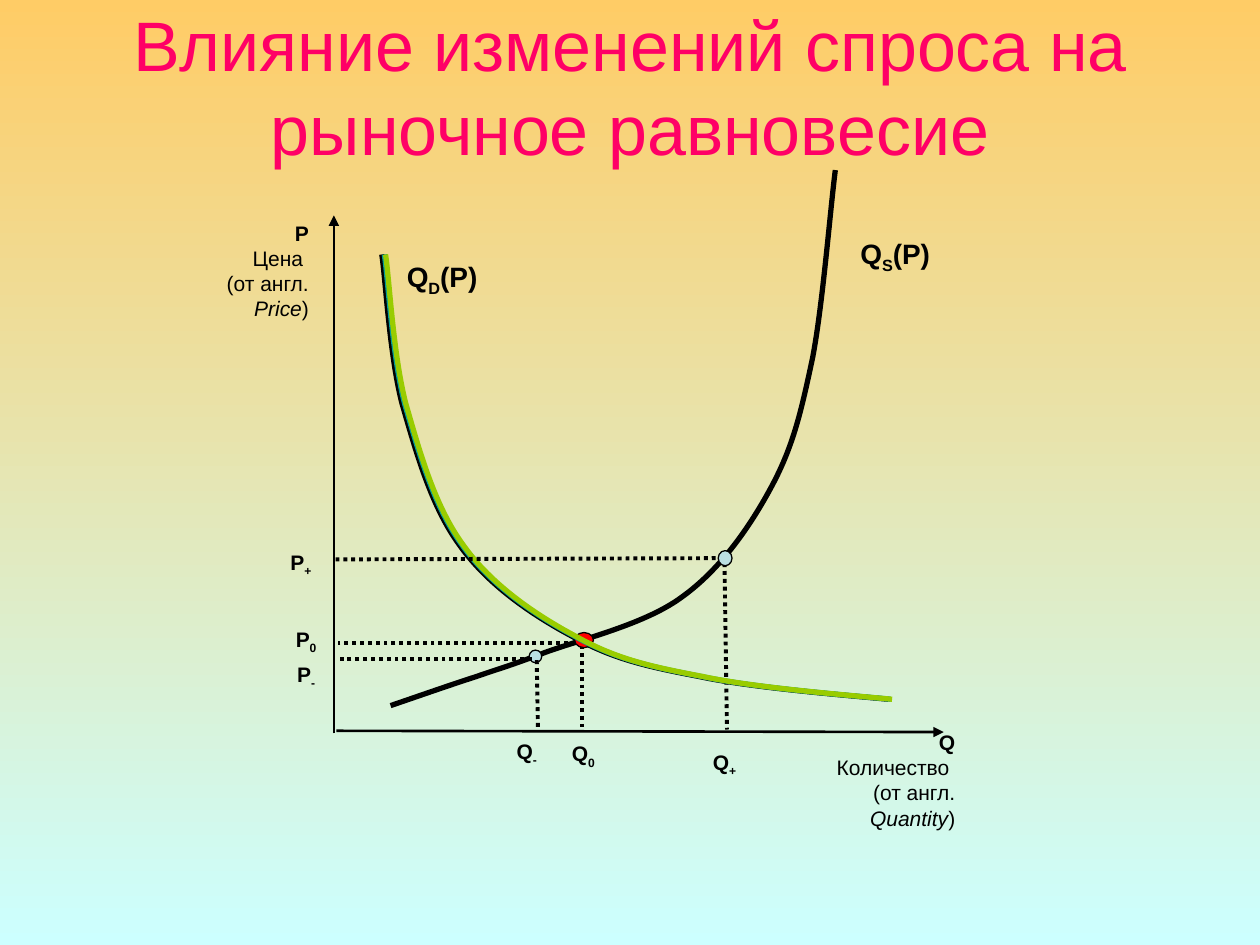
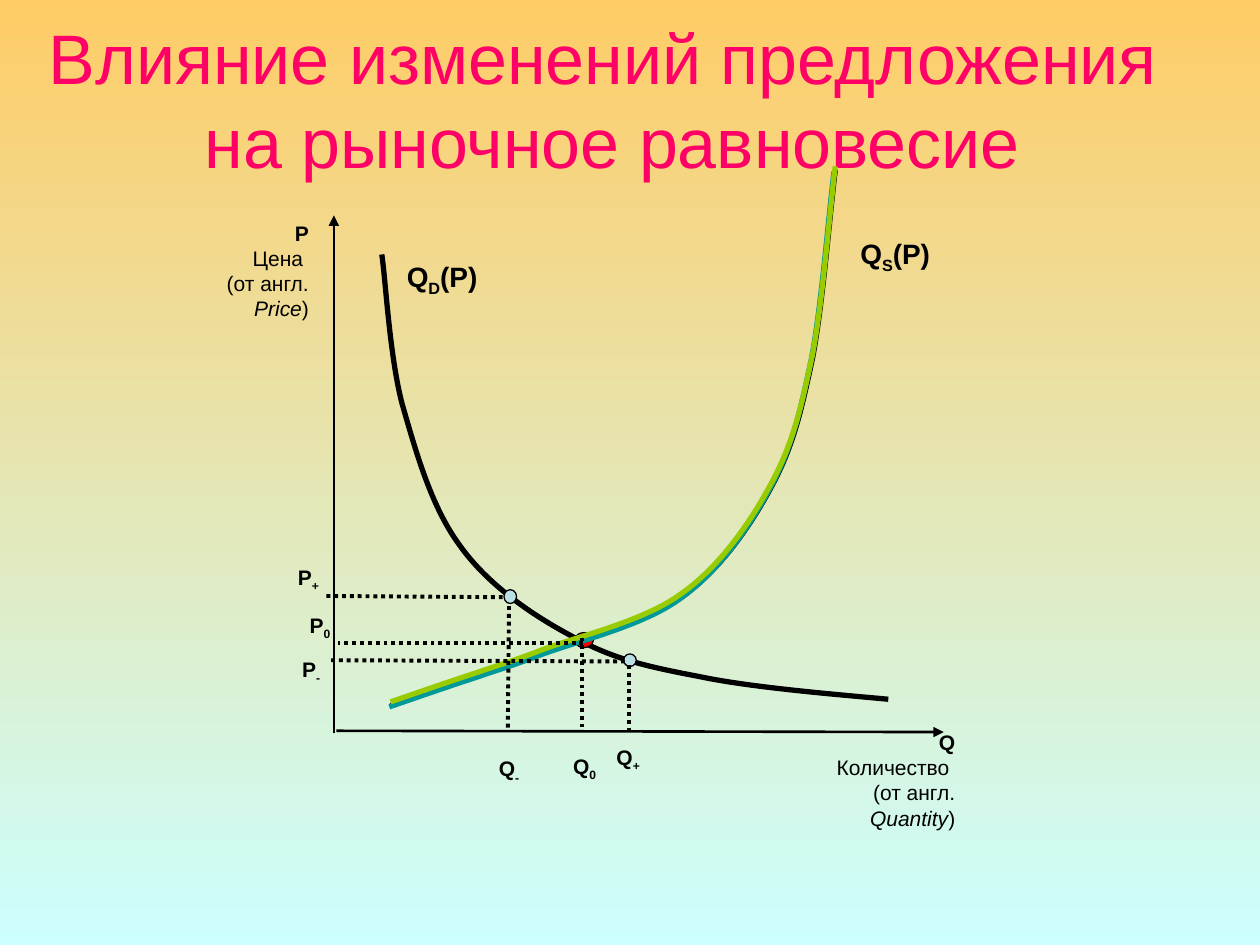
from pptx import Presentation
from pptx import util as u
from pptx.dml.color import RGBColor
from pptx.enum import dml, shapes, text
from pptx.oxml.ns import qn
from lxml import etree

COLORS = {
    "sky": "FFCC66", "ground": "CCFFFF", "title": "FF0066", "ink": "000000",
    "teal": "009999", "green": "99CC00", "equilibrium": "FF0000", "shifted": "BBE0E3",
}
FONT = "Arial"
COLUMNS, ROWS = 10, 7.5
CELL = u.Inches(1)
LEFT, CENTER, RIGHT = text.PP_ALIGN.LEFT, text.PP_ALIGN.CENTER, text.PP_ALIGN.RIGHT

# Start point, then two control points and an end point for each segment
DEMAND = [
    (3.03, 2.02),
    (3.06, 2.21), (3.09, 2.81), (3.19, 3.2),
    (3.3, 3.58), (3.42, 4.02), (3.65, 4.33),
    (3.87, 4.64), (4.22, 4.88), (4.54, 5.05),
    (4.86, 5.23), (5.13, 5.29), (5.55, 5.37),
    (5.97, 5.46), (6.73, 5.52), (7.05, 5.55),
]
SUPPLY = [
    (3.1, 5.6),
    (3.22, 5.56), (3.59, 5.43), (3.78, 5.37),
    (3.98, 5.3), (4, 5.3), (4.27, 5.2),
    (4.54, 5.09), (5.1, 4.97), (5.41, 4.74),
    (5.72, 4.52), (5.96, 4.17), (6.13, 3.85),
    (6.3, 3.53), (6.36, 3.26), (6.45, 2.84),
    (6.53, 2.42), (6.59, 1.66), (6.63, 1.35),
]
AXES = [((2.65, 5.82), (2.65, 1.71)), ((2.67, 5.8), (7.49, 5.81))]
AXIS_CAPTIONS = [
    ((1.53, 1.7, 1.02, 1.17), "P", "Цена ", "Price"),
    ((6.07, 5.74, 1.61, 1.02), "Q", "Количество ", "Quantity"),
]
DEMAND_NAME = ((3.13, 2.01, 0.89, 0.37), "D")
SUPPLY_NAME = ((6.73, 1.83, 0.83, 0.38), "S")
EQUILIBRIUM = (4.56, 5.02, 0.15, 0.12)
EQUILIBRIUM_GUIDES = [((4.63, 5.1), (2.68, 5.1)), ((4.62, 5.06), (4.62, 5.77))]

DEMAND_SHIFT = {
    "title": "Влияние изменений спроса на рыночное равновесие",
    "title_box": (0.5, 0.3, 9, 0.76),
    "guides_below": [((5.75, 4.47), (5.77, 5.79)), *EQUILIBRIUM_GUIDES],
    "moving_curve": DEMAND,
    "offsets": {"teal": (0.02, 0), "green": (0.03, 0)},
    "points": [(5.7, 4.37, 0.11, 0.12), (4.2, 5.16, 0.1, 0.1)],
    "guides_above": [
        ((5.68, 4.43), (2.64, 4.44)),
        ((4.22, 5.23), (2.69, 5.23)), ((4.26, 5.24), (4.27, 5.8)),
    ],
    "prices": {"+": (2.15, 4.31, 0.42, 0.37), "0": (2.19, 4.92, 0.42, 0.37),
               "-": (2.18, 5.2, 0.42, 0.37)},
    "quantities": {"-": (3.94, 5.81, 0.48, 0.35), "0": (4.39, 5.83, 0.48, 0.35),
                   "+": (5.51, 5.9, 0.48, 0.35)},
}
SUPPLY_SHIFT = {
    "title": "Влияние изменений предложения \vна рыночное равновесие",
    "title_box": (0.22, 0.17, 9.28, 1.23),
    "guides_below": [],
    "moving_curve": SUPPLY,
    "offsets": {"teal": (-0.01, 0.01), "green": (0, -0.03)},
    "points": [(4, 4.68, 0.1, 0.11), (4.95, 5.19, 0.1, 0.1)],
    "guides_above": [
        ((3.99, 4.74), (2.59, 4.73)), ((4.04, 4.81), (4.03, 5.79)),
        *EQUILIBRIUM_GUIDES,
        ((4.96, 5.25), (2.6, 5.24)), ((4.99, 5.28), (4.99, 5.8)),
    ],
    "prices": {"+": (2.2, 4.43, 0.43, 0.37), "0": (2.28, 4.81, 0.44, 0.41),
               "-": (2.2, 5.16, 0.44, 0.41)},
    "quantities": {"-": (3.27, 5.95, 1.54, 0.74), "0": (3.87, 5.93, 1.54, 0.74),
                   "+": (4.69, 5.86, 0.59, 0.28)},
}


def rgb(name):
    return RGBColor.from_string(COLORS[name])


def cells(values):
    """Turn grid cells into slide lengths."""
    return [round(value * CELL) for value in values]


def apply(target, formats):
    for name, value in formats.items():
        setattr(target, name, value)


def style_font(font, size, color="ink", **formats):
    apply(font, {"name": FONT, "size": u.Pt(size), **formats})
    font.color.rgb = rgb(color)


def style_line(line, width, color="ink"):
    line.width = u.Pt(width)
    line.color.rgb = rgb(color)


def paint_background(master):
    fill = master.background.fill
    fill.gradient()
    fill.gradient_angle = 270
    for stop, name in zip(fill.gradient_stops, ("sky", "ground")):
        stop.color.rgb = rgb(name)


def add_title(slide, wording, box):
    title = slide.shapes.title
    apply(title, dict(zip(("left", "top", "width", "height"), cells(box))))
    frame = title.text_frame
    frame.text = wording
    apply(frame, {"word_wrap": True, "auto_size": text.MSO_AUTO_SIZE.NONE,
                  "vertical_anchor": text.MSO_ANCHOR.MIDDLE})
    paragraph = frame.paragraphs[0]
    paragraph.alignment = CENTER
    for run in paragraph.runs:
        style_font(run.font, 40, "title")


def add_label(slide, box, lines, size=12, align=RIGHT):
    """Each line is a list of (wording, style); style may hold b, i and s for subscript."""
    frame = slide.shapes.add_textbox(*cells(box)).text_frame
    frame.word_wrap = True
    for number, line in enumerate(lines):
        paragraph = frame.add_paragraph() if number else frame.paragraphs[0]
        paragraph.alignment = align
        for wording, style in line:
            run = paragraph.add_run()
            run.text = wording
            style_font(run.font, size, bold="b" in style, italic="i" in style)
            if "s" in style:
                run._r.get_or_add_rPr().set("baseline", "-25000")


def add_line(slide, start, end, width):
    line = slide.shapes.add_connector(shapes.MSO_CONNECTOR.STRAIGHT, *cells(start + end))
    style_line(line.line, width)
    etree.SubElement(line._element.spPr, qn("a:effectLst"))
    return line


def add_axis(slide, start, end):
    axis = add_line(slide, start, end, 1.5)
    etree.SubElement(axis.line._get_or_add_ln(), qn("a:tailEnd"), type="triangle")


def add_guides(slide, guides):
    for start, end in guides:
        add_line(slide, start, end, 2.25).line.dash_style = dml.MSO_LINE.ROUND_DOT


def bend(curve):
    """Join every three straight segments into one cubic Bézier segment."""
    segments = list(curve._element.iter(qn("a:lnTo")))
    for first in range(0, len(segments), 3):
        cubic = etree.Element(qn("a:cubicBezTo"))
        segments[first].addprevious(cubic)
        for segment in segments[first:first + 3]:
            cubic.append(segment[0])
            segment.getparent().remove(segment)


def add_curve(slide, knots, color="ink", offset=(0, 0)):
    start, *others = [cells((x + offset[0], y + offset[1])) for x, y in knots]
    builder = slide.shapes.build_freeform(*start)
    builder.add_line_segments(others, close=False)
    curve = builder.convert_to_shape()
    bend(curve)
    curve.shadow.inherit = False
    curve.fill.background()
    style_line(curve.line, 3, color)


def add_point(slide, box, color):
    point = slide.shapes.add_shape(shapes.MSO_SHAPE.OVAL, *cells(box))
    point.shadow.inherit = False
    point.fill.solid()
    point.fill.fore_color.rgb = rgb(color)
    style_line(point.line, 0.75)


def add_axis_caption(slide, box, symbol, meaning, english):
    add_label(slide, box, [[(symbol, "b")], [(meaning, "")], [("(от англ.", "")],
                           [(english, "i"), (")", "")]])


def add_curve_name(slide, box, name):
    add_label(slide, box, [[("Q", "b"), (name, "bs"), ("(P)", "b")]], 16, LEFT)


def add_levels(slide, symbol, levels, align):
    for level, box in levels.items():
        add_label(slide, box, [[(symbol, "b"), (level, "bs")]], align=align)


def add_market_slide(deck, case):
    slide = deck.slides.add_slide(deck.slide_layouts.get_by_name("Title Only"))
    add_guides(slide, case["guides_below"])
    add_title(slide, case["title"], case["title_box"])
    for start, end in AXES:
        add_axis(slide, start, end)
    add_curve(slide, DEMAND)
    for caption in AXIS_CAPTIONS:
        add_axis_caption(slide, *caption)
    add_curve_name(slide, *DEMAND_NAME)
    add_curve(slide, SUPPLY)
    add_curve_name(slide, *SUPPLY_NAME)
    add_point(slide, EQUILIBRIUM, "equilibrium")
    for color, offset in case["offsets"].items():
        add_curve(slide, case["moving_curve"], color, offset)
    for point in case["points"]:
        add_point(slide, point, "shifted")
    add_guides(slide, case["guides_above"])
    add_levels(slide, "P", case["prices"], RIGHT)
    add_levels(slide, "Q", case["quantities"], CENTER)


def main():
    deck = Presentation()
    deck.slide_width, deck.slide_height = cells((COLUMNS, ROWS))
    paint_background(deck.slide_master)
    for case in (DEMAND_SHIFT, SUPPLY_SHIFT):
        add_market_slide(deck, case)
    deck.save("out.pptx")


if __name__ == "__main__":
    main()
